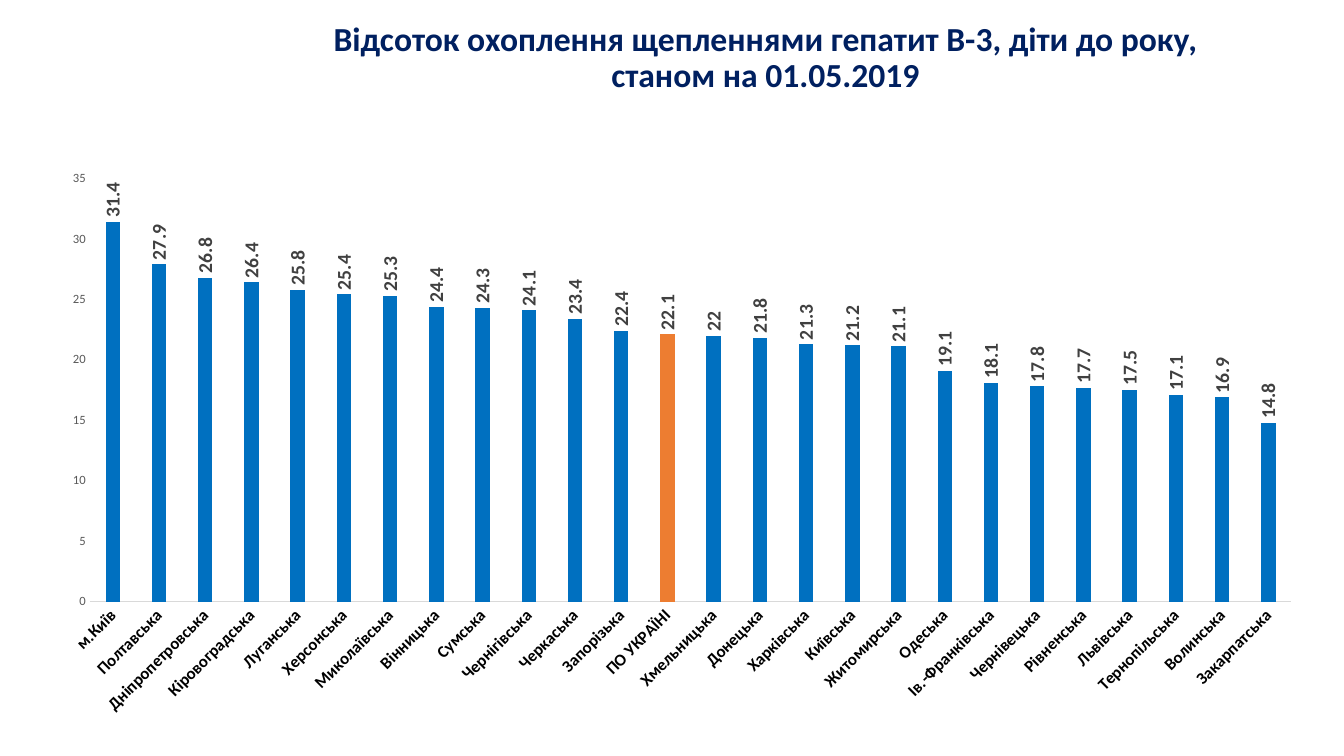
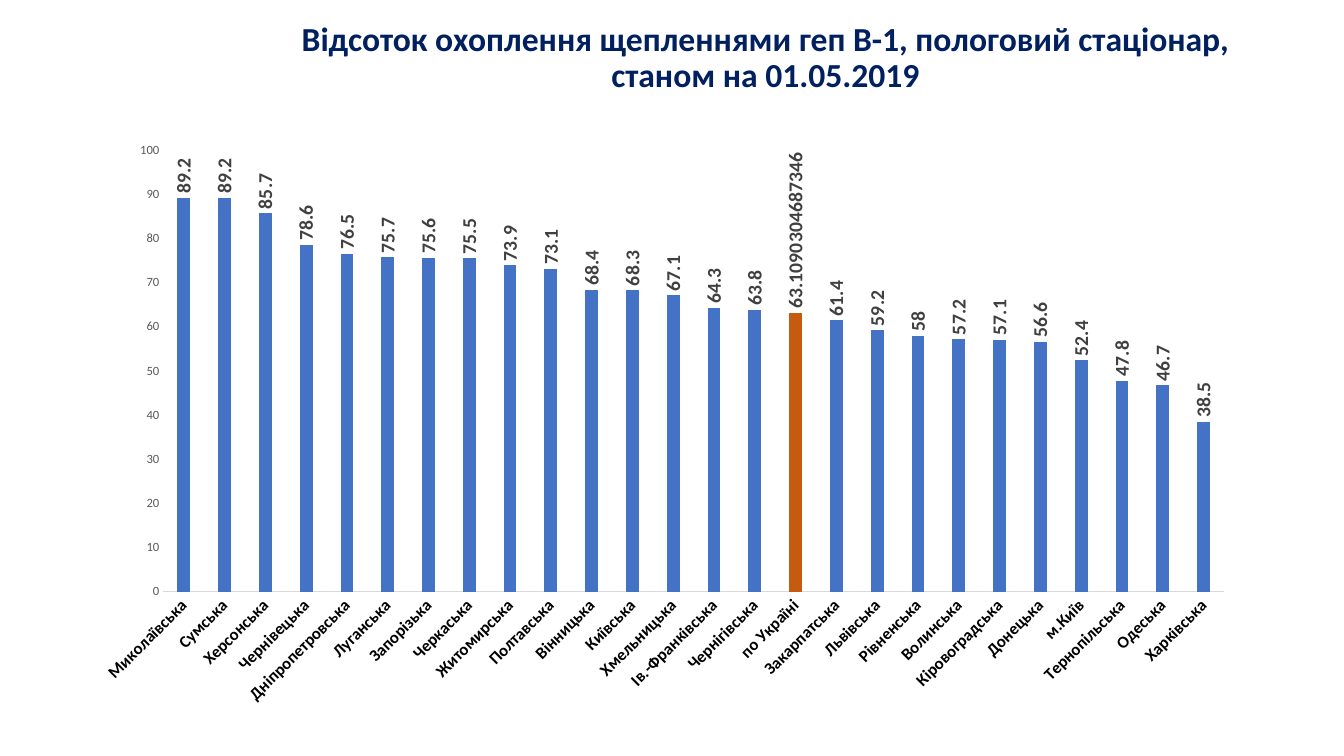
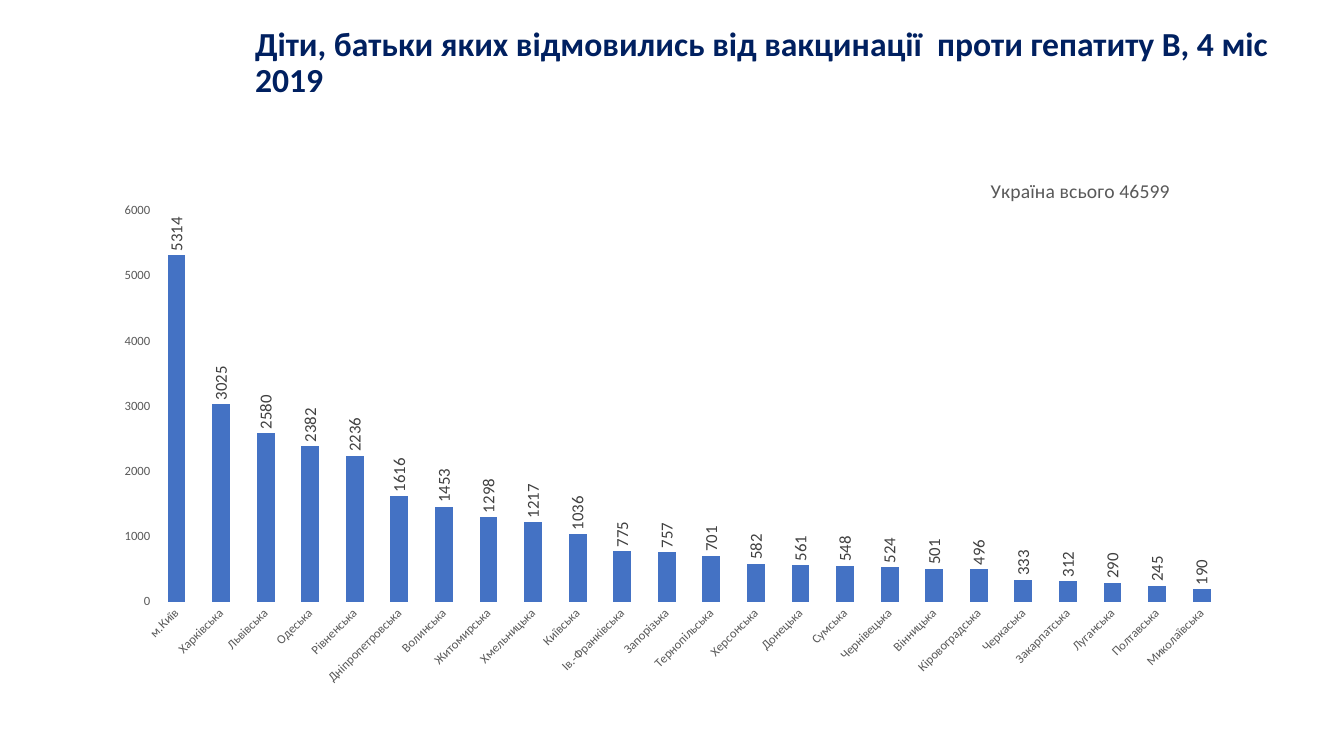
from lxml import etree
from pptx import Presentation
from pptx import util as u
from pptx.chart.data import CategoryChartData
from pptx.dml.color import RGBColor
from pptx.enum import chart as charts, text
from pptx.oxml import ns

COVERAGE_INFANTS = {
    "м.Київ": 31.4, "Полтавська": 27.9, "Дніпропетровська": 26.8,
    "Кіровоградська": 26.4, "Луганська": 25.8, "Херсонська": 25.4,
    "Миколаївська": 25.3, "Вінницька": 24.4, "Сумська": 24.3,
    "Чернігівська": 24.1, "Черкаська": 23.4, "Запорізька": 22.4,
    "ПО УКРАЇНІ": 22.1, "Хмельницька": 22, "Донецька": 21.8,
    "Харківська": 21.3, "Київська": 21.2, "Житомирська": 21.1,
    "Одеська": 19.1, "Ів.-Франківська": 18.1, "Чернівецька": 17.8,
    "Рівненська": 17.7, "Львівська": 17.5, "Тернопільська": 17.1,
    "Волинська": 16.9, "Закарпатська": 14.8,
}
COVERAGE_MATERNITY = {
    "Миколаївська": 89.2, "Сумська": 89.2, "Херсонська": 85.7,
    "Чернівецька": 78.6, "Дніпропетровська": 76.5, "Луганська": 75.7,
    "Запорізька": 75.6, "Черкаська": 75.5, "Житомирська": 73.9,
    "Полтавська": 73.1, "Вінницька": 68.4, "Київська": 68.3,
    "Хмельницька": 67.1, "Ів.-Франківська": 64.3, "Чернігівська": 63.8,
    "по Україні": 63.10903, "Закарпатська": 61.4,
    "Львівська": 59.2, "Рівненська": 58, "Волинська": 57.2,
    "Кіровоградська": 57.1, "Донецька": 56.6, "м.Київ": 52.4,
    "Тернопільська": 47.8, "Одеська": 46.7, "Харківська": 38.5,
}
REFUSALS = {
    "м.Київ": 5314, "Харківська": 3025, "Львівська": 2580,
    "Одеська": 2382, "Рівненська": 2236, "Дніпропетровська": 1616,
    "Волинська": 1453, "Житомирська": 1298, "Хмельницька": 1217,
    "Київська": 1036, "Ів.-Франківська": 775, "Запорізька": 757,
    "Тернопільська": 701, "Херсонська": 582, "Донецька": 561,
    "Сумська": 548, "Чернівецька": 524, "Вінницька": 501,
    "Кіровоградська": 496, "Черкаська": 333, "Закарпатська": 312,
    "Луганська": 290, "Полтавська": 245, "Миколаївська": 190,
}


def rgb(value):
    return RGBColor.from_string(value)


def assign(target, values):
    for name, value in values.items():
        setattr(target, name, value)


def rotate(element, degrees):
    body = element.find(".//" + ns.qn("a:bodyPr"))
    body.set("rot", str(degrees * 60000))
    body.set("vert", "horz")


def set_layout(element, index, values):
    for old in element.findall(ns.qn("c:layout")):
        element.remove(old)
    layout = etree.Element(ns.qn("c:layout"))
    manual = etree.SubElement(layout, ns.qn("c:manualLayout"))
    for name, value in values.items():
        etree.SubElement(manual, ns.qn("c:" + name)).set("val", str(value))
    element.insert(index, layout)


class Deck:
    FONT = "Calibri"
    NAVY = "002060"
    BLACK = "000000"
    GREY = "595959"
    DARK_GREY = "404040"
    RULE = "D9D9D9"

    def __init__(self):
        self.prs = Presentation()
        assign(self.prs, {"slide_width": u.Inches(13.33), "slide_height": u.Inches(7.5)})
        self.slide = None

    def style(self, font, size, color, bold=False):
        assign(font, {"name": self.FONT, "size": u.Pt(size), "bold": bold})
        font.color.rgb = rgb(color)

    def place(self, box):
        return [u.Inches(length) for length in box]

    def add_slide(self, lines, box, align):
        self.slide = self.prs.slides.add_slide(self.prs.slide_layouts[5])
        title = self.slide.shapes.title
        assign(title, dict(zip(("left", "top", "width", "height"), self.place(box))))
        frame = title.text_frame
        frame.text = "\n".join(lines)
        assign(frame, {
            "word_wrap": True,
            "auto_size": text.MSO_AUTO_SIZE.NONE,
            "vertical_anchor": text.MSO_ANCHOR.TOP,
        })
        for paragraph in frame.paragraphs:
            assign(paragraph, {"alignment": align, "line_spacing": 0.9})
            self.style(paragraph.font, 24, self.NAVY, True)

    def add_columns(self, regions, box, plot_box, top, step, color, highlight=None,
                    gap=219, overlap=-27, bold=True, region_size=12, label_size=14,
                    region_color=BLACK, baseline=True):
        data = CategoryChartData()
        data.categories = list(regions)
        data.add_series("Series 1", list(regions.values()))
        chart = self.slide.shapes.add_chart(
            charts.XL_CHART_TYPE.COLUMN_CLUSTERED, *self.place(box), data).chart
        assign(chart, {"has_legend": False, "has_title": False})
        self.style(chart.font, 10, self.BLACK)

        plot = chart.plots[0]
        assign(plot, {"gap_width": gap, "overlap": overlap, "vary_by_categories": False})
        columns = plot.series[0]
        fills = [(columns, color)]
        if highlight:
            fills.append((columns.points[list(regions).index(highlight[0])], highlight[1]))
        for part, fill_color in fills:
            part.format.fill.solid()
            part.format.fill.fore_color.rgb = rgb(fill_color)

        labels = columns.data_labels
        assign(labels, {"show_value": True, "number_format": "General",
                        "number_format_is_linked": False,
                        "position": charts.XL_LABEL_POSITION.OUTSIDE_END})
        self.style(labels.font, label_size, self.DARK_GREY, bold)
        rotate(labels._element, -90)

        for axis in (chart.category_axis, chart.value_axis):
            assign(axis, {"has_major_gridlines": False,
                          "major_tick_mark": charts.XL_TICK_MARK.NONE,
                          "minor_tick_mark": charts.XL_TICK_MARK.NONE})
            axis.format.line.fill.background()
        self.style(chart.category_axis.tick_labels.font, region_size, region_color, bold)
        rotate(chart.category_axis._element, -45)
        if baseline:
            line = chart.category_axis.format.line
            line.width = u.Pt(0.75)
            line.color.rgb = rgb(self.RULE)
        assign(chart.value_axis, {"minimum_scale": 0, "maximum_scale": top, "major_unit": step})
        self.style(chart.value_axis.tick_labels.font, 9, self.GREY)

        left, upper, width, height = box
        set_layout(chart._chartSpace.chart.plotArea, 0, {
            "layoutTarget": "inner", "xMode": "edge", "yMode": "edge",
            "x": (plot_box[0] - left) / width, "y": (plot_box[1] - upper) / height,
            "w": plot_box[2] / width, "h": plot_box[3] / height,
        })
        return chart

    def add_point_label(self, chart, index, wording):
        label = chart.plots[0].series[0].points[index].data_label
        label.text_frame.text = wording
        label.position = charts.XL_LABEL_POSITION.OUTSIDE_END
        self.style(label.text_frame.paragraphs[0].runs[0].font, 14, self.DARK_GREY, True)
        rotate(label.text_frame._txBody.getparent(), -90)

    def add_chart_title(self, chart, wording, box, left, top):
        chart.has_title = True
        title = chart.chart_title
        title.text_frame.text = wording
        self.style(title.text_frame.paragraphs[0].runs[0].font, 14, self.GREY)
        set_layout(title._element, 1, {
            "xMode": "edge", "yMode": "edge",
            "x": (left - box[0]) / box[2], "y": (top - box[1]) / box[3],
        })


def main():
    deck = Deck()
    as_of = "станом на 01.05.2019 "

    deck.add_slide(["Відсоток охоплення щепленнями гепатит В-3, діти до року, ", as_of],
                   (2.56, 0.17, 10.14, 0.89), text.PP_ALIGN.CENTER)
    deck.add_columns(COVERAGE_INFANTS, (0.46, 1.58, 12.6, 5.62), (0.89, 1.77, 11.92, 4.2),
                     35, 5, "0070C0", ("ПО УКРАЇНІ", "ED7D31"))

    deck.add_slide(["Відсоток охоплення щепленнями геп В-1, пологовий стаціонар, ", as_of],
                   (2.56, 0.17, 10.14, 0.86), text.PP_ALIGN.CENTER)
    country = "по Україні"
    maternity = deck.add_columns(COVERAGE_MATERNITY, (0.8, 1.31, 11.57, 5.8),
                                 (1.62, 1.49, 10.52, 4.38), 100, 10, "4472C4",
                                 (country, "C55A11"))
    deck.add_point_label(maternity, list(COVERAGE_MATERNITY).index(country),
                         "63.1090304687346")

    deck.add_slide(["Діти, батьки яких відмовились від вакцинації  проти гепатиту В, 4 міс  2019"],
                   (2.43, 0.22, 10.55, 0.77), text.PP_ALIGN.LEFT)
    refusals_box = (1.02, 1.4, 11.35, 5.51)
    refusals = deck.add_columns(REFUSALS, refusals_box, (1.53, 2.09, 10.61, 3.88),
                                6000, 1000, "4472C4", gap=150, overlap=0, bold=False,
                                region_size=9, label_size=12, region_color=Deck.GREY,
                                baseline=False)
    deck.add_chart_title(refusals, "Україна всього 46599", refusals_box, 9.79, 1.72)

    deck.prs.save("out.pptx")


if __name__ == "__main__":
    main()
